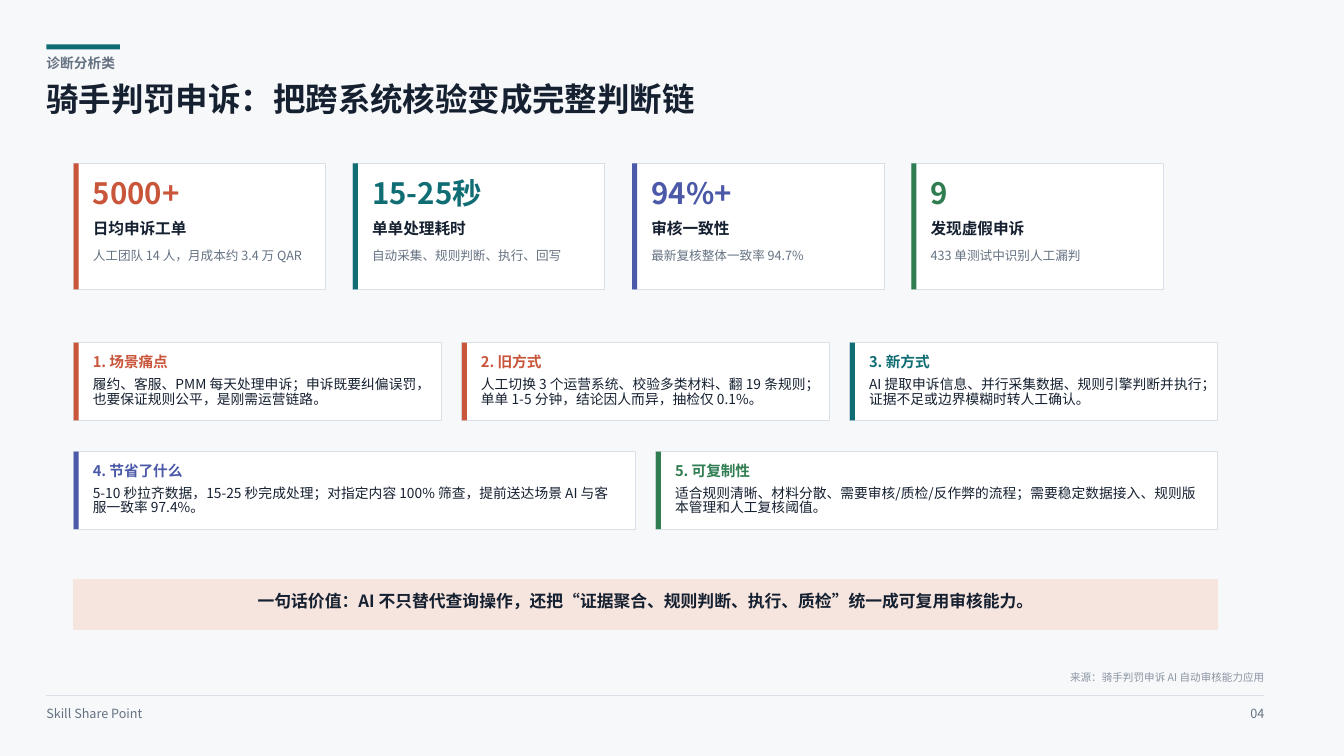
from dataclasses import dataclass

from lxml import etree
from pptx import Presentation
from pptx.dml.color import RGBColor
from pptx.enum import shapes, text
from pptx.oxml import ns
from pptx.util import Inches, Pt


@dataclass(frozen=True)
class Theme:
    font: str = "Noto Sans CJK SC"
    page: str = "F7F8FA"
    card: str = "FFFFFF"
    border: str = "D9E0E8"
    ink: str = "152030"
    muted: str = "657282"
    faint: str = "8A94A3"
    rust: str = "C9553A"
    teal: str = "0F6D73"
    indigo: str = "4C59A8"
    green: str = "2F7D51"
    blush: str = "F6E4DE"
    title_size: float = 23.2
    value_size: float = 21
    takeaway_size: float = 12
    label_size: float = 11.2
    heading_size: float = 10.5
    body_size: float = 9.8
    small_size: float = 9
    source_size: float = 7.5
    spacing: float = 0.88


THEME = Theme()

CATEGORY = "诊断分析类"
TITLE = "骑手判罚申诉：把跨系统核验变成完整判断链"
METRICS = [
    ("5000+", "日均申诉工单", "人工团队 14 人，月成本约 3.4 万 QAR", THEME.rust),
    ("15-25秒", "单单处理耗时", "自动采集、规则判断、执行、回写", THEME.teal),
    ("94%+", "审核一致性", "最新复核整体一致率 94.7%", THEME.indigo),
    ("9", "发现虚假申诉", "433 单测试中识别人工漏判", THEME.green),
]
STORY_ROWS = [
    [
        ("1. 场景痛点", "履约、客服、PMM 每天处理申诉；申诉既要纠偏误罚，也要保证规则公平，是刚需运营链路。", THEME.rust),
        ("2. 旧方式", "人工切换 3 个运营系统、校验多类材料、翻 19 条规则；单单 1-5 分钟，结论因人而异，抽检仅 0.1%。", THEME.rust),
        ("3. 新方式", "AI 提取申诉信息、并行采集数据、规则引擎判断并执行；证据不足或边界模糊时转人工确认。", THEME.teal),
    ],
    [
        ("4. 节省了什么", "5-10 秒拉齐数据，15-25 秒完成处理；对指定内容 100% 筛查，提前送达场景 AI 与客服一致率 97.4%。", THEME.indigo),
        ("5. 可复制性", "适合规则清晰、材料分散、需要审核/质检/反作弊的流程；需要稳定数据接入、规则版本管理和人工复核阈值。", THEME.green),
    ],
]
TAKEAWAY = "一句话价值：AI 不只替代查询操作，还把“证据聚合、规则判断、执行、质检”统一成可复用审核能力。"
SOURCE = "来源：骑手判罚申诉 AI 自动审核能力应用"
FOOTER = "Skill Share Point"
PAGE_NUMBER = "04"

MARGIN, RIGHT_EDGE = 0.46, 12.54
CONTENT_LEFT, CONTENT_WIDTH = 0.73, 11.35
METRIC_TOP, METRIC_WIDTH, METRIC_HEIGHT, METRIC_GAP = 1.62, 2.5, 1.25, 0.27
STORY_TOP, STORY_HEIGHT, STORY_PITCH, STORY_GAP = 3.4, 0.77, 1.08, 0.2
ACCENT_WIDTH, TEXT_INSET = 0.05, 0.19


def color(code):
    return RGBColor.from_string(code)


def write(holder, words, size, ink, bold=False, align=text.PP_ALIGN.LEFT):
    frame = holder.text_frame
    frame.text = words
    frame.word_wrap = True
    frame.auto_size = text.MSO_AUTO_SIZE.NONE
    frame.vertical_anchor = text.MSO_ANCHOR.TOP
    frame.margin_left = frame.margin_right = frame.margin_top = frame.margin_bottom = 0
    paragraph = frame.paragraphs[0]
    paragraph.alignment = align
    paragraph.line_spacing = THEME.spacing
    for run in paragraph.runs:
        run.font.size = Pt(size)
        run.font.bold = bold
        run.font.color.rgb = color(ink)
        run.font.name = THEME.font
        east_asian = etree.SubElement(run._r.get_or_add_rPr(), ns.qn("a:ea"))
        east_asian.set("typeface", THEME.font)


def add_words(slide, box, words, size, ink, **style):
    write(slide.shapes.add_textbox(*map(Inches, box)), words, size, ink, **style)


def add_block(slide, box, fill, line=None):
    block = slide.shapes.add_shape(shapes.MSO_SHAPE.RECTANGLE, *map(Inches, box))
    block.shadow.inherit = False
    block.fill.solid()
    block.fill.fore_color.rgb = color(fill)
    if line:
        block.line.color.rgb = color(line)
        block.line.width = Pt(0.75)
    else:
        block.line.fill.background()


def add_card(slide, left, top, width, height, accent):
    add_block(slide, (left, top, width, height), THEME.card, THEME.border)
    add_block(slide, (left, top, ACCENT_WIDTH, height), accent)


def add_header(slide):
    add_block(slide, (MARGIN, 0.44, 0.73, 0.05), THEME.teal)
    add_words(slide, (MARGIN, 0.56, 3.75, 0.25), CATEGORY, THEME.body_size, THEME.muted, bold=True)
    title = slide.shapes.title
    title.left, title.top, title.width, title.height = map(Inches, (MARGIN, 0.83, 10, 0.5))
    write(title, TITLE, THEME.title_size, THEME.ink, bold=True)


def add_metrics(slide):
    for column, (value, label, detail, accent) in enumerate(METRICS):
        left = CONTENT_LEFT + column * (METRIC_WIDTH + METRIC_GAP)
        add_card(slide, left, METRIC_TOP, METRIC_WIDTH, METRIC_HEIGHT, accent)
        lines = [
            (value, 0.16, 0.38, THEME.value_size, accent, True),
            (label, 0.57, 0.25, THEME.label_size, THEME.ink, True),
            (detail, 0.86, 0.27, THEME.small_size, THEME.muted, False),
        ]
        for words, drop, height, size, ink, bold in lines:
            box = (left + TEXT_INSET, METRIC_TOP + drop, METRIC_WIDTH - 0.29, height)
            add_words(slide, box, words, size, ink, bold=bold)


def add_story(slide):
    for row, panels in enumerate(STORY_ROWS):
        top = STORY_TOP + row * STORY_PITCH
        width = (CONTENT_WIDTH - STORY_GAP * (len(panels) - 1)) / len(panels)
        for column, (heading, body, accent) in enumerate(panels):
            left = CONTENT_LEFT + column * (width + STORY_GAP)
            add_card(slide, left, top, width, STORY_HEIGHT, accent)
            inner_left, inner_width = left + TEXT_INSET, width - 0.34
            add_words(slide, (inner_left, top + 0.12, inner_width, 0.19),
                      heading, THEME.heading_size, accent, bold=True)
            add_words(slide, (inner_left, top + 0.35, inner_width, 0.33),
                      body, THEME.body_size, THEME.ink)


def add_takeaway(slide):
    add_block(slide, (CONTENT_LEFT, 5.75, CONTENT_WIDTH, 0.5), THEME.blush, THEME.blush)
    add_words(slide, (1, 5.89, 10.81, 0.21), TAKEAWAY, THEME.takeaway_size, THEME.ink,
              bold=True, align=text.PP_ALIGN.CENTER)


def add_footer(slide):
    right = text.PP_ALIGN.RIGHT
    add_words(slide, (RIGHT_EDGE - 4, 6.67, 4, 0.17), SOURCE, THEME.source_size, THEME.faint, align=right)
    ends = map(Inches, (MARGIN, 6.9, RIGHT_EDGE, 6.9))
    rule = slide.shapes.add_connector(shapes.MSO_CONNECTOR.STRAIGHT, *ends)
    rule.line.color.rgb = color(THEME.border)
    rule.line.width = Pt(0.75)
    etree.SubElement(rule._element.spPr, ns.qn("a:effectLst"))
    add_words(slide, (MARGIN, 7.02, 2.6, 0.19), FOOTER, THEME.small_size, THEME.muted)
    add_words(slide, (RIGHT_EDGE - 0.46, 7.02, 0.46, 0.19), PAGE_NUMBER,
              THEME.small_size, THEME.muted, align=right)


def main():
    deck = Presentation()
    deck.slide_width, deck.slide_height = Inches(13.33), Inches(7.5)
    slide = deck.slides.add_slide(deck.slide_layouts[5])
    slide.background.fill.solid()
    slide.background.fill.fore_color.rgb = color(THEME.page)
    add_header(slide)
    add_metrics(slide)
    add_story(slide)
    add_takeaway(slide)
    add_footer(slide)
    deck.save("out.pptx")


if __name__ == "__main__":
    main()
